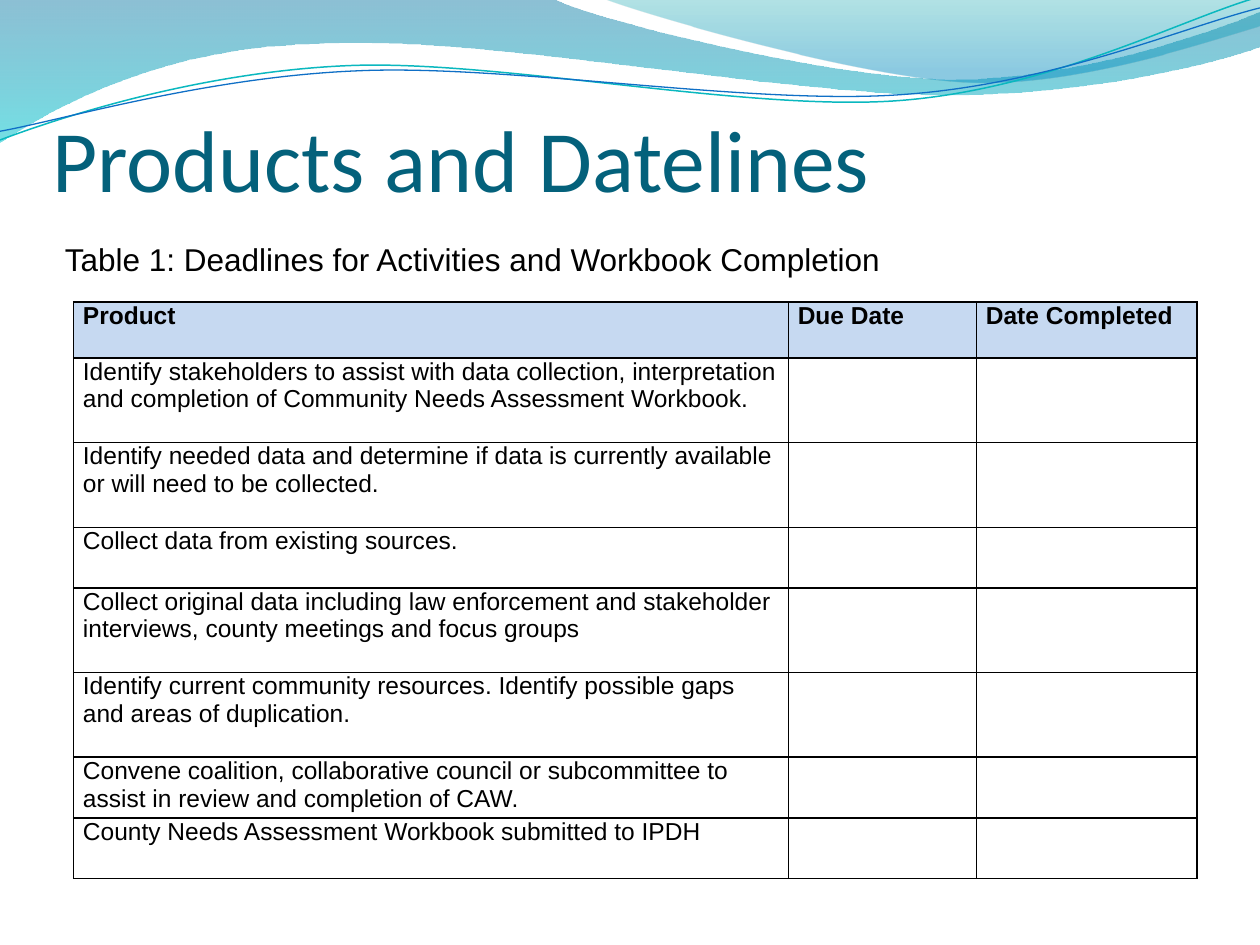
from lxml.etree import SubElement
from pptx import Presentation
from pptx.dml.color import RGBColor
from pptx.enum.text import MSO_ANCHOR, MSO_AUTO_SIZE, PP_ALIGN
from pptx.oxml.ns import qn
from pptx.util import Pt

COLORS = {
    "title": "04617B", "text": "000000", "border": "000000", "header": "C6D9F1",
    "blue": "0074A1", "cyan": "00C6CF", "teal": "00A1A9", "sky": "008BBF",
    "teal line": "0AB8BF", "blue line": "0F6FC6",
}
TITLE = "Products and Datelines"
CAPTION = "Table 1: Deadlines for Activities and Workbook Completion"
HEADERS = ["Product", "Due Date", "Date Completed"]
PRODUCTS = [
    "Identify stakeholders to assist with data collection, interpretation "
    "and completion of Community Needs Assessment Workbook.",
    "Identify needed data and determine if data is currently available "
    "or will need to be collected.",
    "Collect data from existing sources.",
    "Collect original data including law enforcement and stakeholder "
    "interviews, county meetings and focus groups",
    "Identify current community resources. Identify possible gaps "
    "and areas of duplication.",
    "Convene coalition, collaborative council or subcommittee to "
    "assist in review and completion of CAW.",
    "County Needs Assessment Workbook submitted to IPDH",
]
COLUMN_WIDTHS = [408.5, 107.5, 126]
ROW_HEIGHTS = [32, 48.4, 48.4, 34.6, 48.4, 48.4, 34.6, 34.6]

# A wave is a start point, then segments: one point is a straight line,
# three points are a Bezier curve. Gradient stops: position, colour, opacity %.
BANDS = [
    {"start": (0, 0),
     "segments": [[(317, -0.5)],
                  [(343, 12), (478, 45), (546, 45)],
                  [(614, 45), (690, 19), (720, 6.5)],
                  [(721, 26)],
                  [(708, 32), (626, 55), (537, 54)],
                  [(446, 54), (275, 20), (185, 24.5)],
                  [(93, 26), (33, 60), (-0.5, 81.5)]],
     "stops": [(0, "blue", 45), (1, "cyan", 55)]},
    {"start": (345, -0.5),
     "segments": [[(366, 8), (491, 44.5), (554, 47)],
                  [(616, 49.5), (692, 23), (720, 15)],
                  [(720, 0)]],
     "stops": [(0, "teal", 30), (0.8, "sky", 45)]},
]
LINES = [
    {"start": (0, 80),
     "segments": [[(34.5, 67), (114, 41), (199.5, 37.5)],
                  [(284.5, 34), (427, 64), (513.5, 57.5)],
                  [(600, 51), (675, 11), (718.5, -1.5)]],
     "color": "teal line", "width": 0.85},
    {"start": (0, 75),
     "segments": [[(34, 69), (118, 44), (204, 40.5)],
                  [(290, 36.5), (430, 60.5), (516, 54)],
                  [(602, 48), (677.5, 15), (720, 4.5)]],
     "color": "blue line", "width": 0.75},
]


def rgb(name):
    return RGBColor.from_string(COLORS[name])


def format_text(text_frame, font_name, size, color, bold=False):
    for paragraph in text_frame.paragraphs:
        for run in paragraph.runs:
            font = run.font
            font.name, font.size, font.bold = font_name, Pt(size), bold
            font.color.rgb = rgb(color)


def bend(shape, segments):
    """Turn each three-point run of straight lines into one Bezier curve."""
    straight_lines = iter(list(shape._element.spPr.iter(qn("a:lnTo"))))
    for segment in segments:
        first, *others = [next(straight_lines) for _ in segment]
        if others:
            curve = first.makeelement(qn("a:cubicBezTo"))
            first.addprevious(curve)
            for straight_line in (first, *others):
                curve.append(straight_line[0])
                straight_line.getparent().remove(straight_line)


def add_wave(slide, wave, close):
    x, y = wave["start"]
    builder = slide.shapes.build_freeform(Pt(x), Pt(y))
    points = [(Pt(x), Pt(y)) for segment in wave["segments"] for x, y in segment]
    builder.add_line_segments(points, close=close)
    shape = builder.convert_to_shape()
    bend(shape, wave["segments"])
    shape.shadow.inherit = False
    return shape


def add_band(slide, band):
    shape = add_wave(slide, band, close=True)
    shape.line.fill.background()
    shape.fill.gradient()
    shape.fill.gradient_angle = 270
    for stop, (position, color, _) in zip(shape.fill.gradient_stops, band["stops"]):
        stop.position = position
        stop.color.rgb = rgb(color)
    color_elements = shape._element.spPr.iter(qn("a:srgbClr"))
    for element, (_, _, opacity) in zip(color_elements, band["stops"]):
        SubElement(element, qn("a:alpha"), val=str(opacity * 1000))


def add_line(slide, line):
    shape = add_wave(slide, line, close=False)
    shape.fill.background()
    shape.line.color.rgb = rgb(line["color"])
    shape.line.width = Pt(line["width"])


def add_borders(cell):
    """Put the four borders ahead of the cell fill, as the schema requires."""
    properties = cell._tc.get_or_add_tcPr()
    for index, side in enumerate(("a:lnL", "a:lnR", "a:lnT", "a:lnB")):
        border = properties.makeelement(qn(side), {"w": str(Pt(1))})
        fill = SubElement(border, qn("a:solidFill"))
        SubElement(fill, qn("a:srgbClr"), val=COLORS["border"])
        properties.insert(index, border)


def add_deadlines(slide):
    rows = [HEADERS] + [[product, "", ""] for product in PRODUCTS]
    table = slide.shapes.add_table(
        len(rows), len(HEADERS), Pt(42), Pt(172.6),
        Pt(sum(COLUMN_WIDTHS)), Pt(sum(ROW_HEIGHTS))).table
    for column, width in zip(table.columns, COLUMN_WIDTHS):
        column.width = Pt(width)
    for row, height, texts in zip(table.rows, ROW_HEIGHTS, rows):
        row.height = Pt(height)
        is_header = texts is HEADERS
        for cell, text in zip(row.cells, texts):
            if text:
                cell.text = text
            cell.margin_left = cell.margin_right = Pt(5.4)
            cell.margin_top = cell.margin_bottom = 0
            format_text(cell.text_frame, "Arial", 14, "text", bold=is_header)
            if is_header:
                cell.fill.solid()
                cell.fill.fore_color.rgb = rgb("header")
            else:
                cell.fill.background()
            add_borders(cell)


def place_title(slide):
    title = slide.shapes.title
    title.left, title.top, title.width, title.height = Pt(30), Pt(30), Pt(648), Pt(90)
    frame = title.text_frame
    frame.text = TITLE
    frame.auto_size = MSO_AUTO_SIZE.NONE
    frame.vertical_anchor = MSO_ANCHOR.BOTTOM
    frame.margin_left = frame.margin_right = frame.margin_bottom = 0
    frame.margin_top = Pt(3.6)
    frame.paragraphs[0].alignment = PP_ALIGN.LEFT
    format_text(frame, "Calibri", 50, "title")
    title._element.getparent().append(title._element)  # in front of the waves


def add_caption(slide):
    frame = slide.shapes.add_textbox(Pt(30), Pt(133.5), Pt(540), Pt(29)).text_frame
    frame.word_wrap = True
    frame.auto_size = MSO_AUTO_SIZE.SHAPE_TO_FIT_TEXT
    frame.text = CAPTION
    format_text(frame, "Arial", 18, "text")


def main():
    presentation = Presentation()
    presentation.slide_width, presentation.slide_height = Pt(720), Pt(540)
    slide = presentation.slides.add_slide(presentation.slide_layouts.get_by_name("Title Only"))
    for band in BANDS:
        add_band(slide, band)
    for line in LINES:
        add_line(slide, line)
    place_title(slide)
    add_deadlines(slide)
    add_caption(slide)
    presentation.save("out.pptx")


if __name__ == "__main__":
    main()
